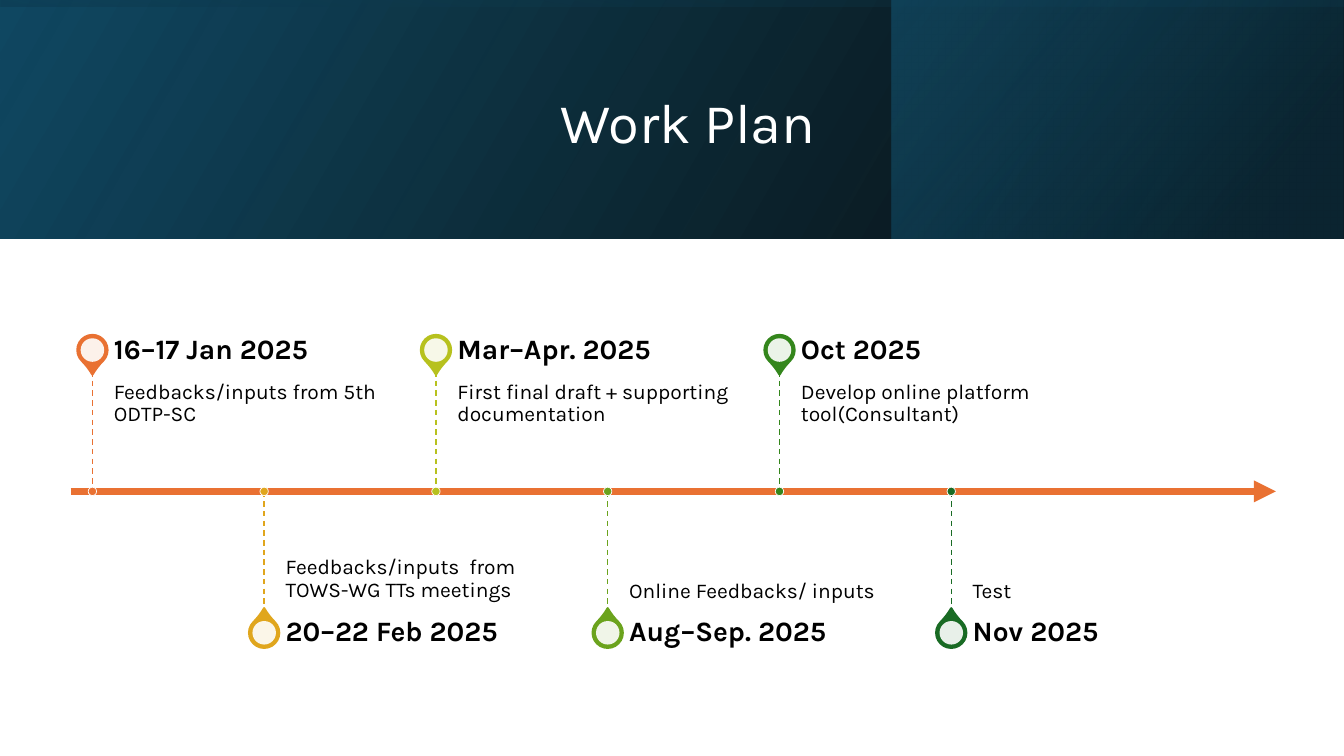
import pptx
import pptx.util
import pptx.dml.color
import pptx.enum.dml
import pptx.enum.shapes
import pptx.enum.text
import pptx.oxml
import pptx.oxml.ns
from dataclasses import dataclass

COLS, ROWS = 160, 90
UNIT = pptx.util.Inches(13.333333) / COLS
AXIS, FIRST, PITCH, STEM = 58.5, 11, 20.45, 14.33
BAND = 28.44
KIND = pptx.enum.shapes.MSO_SHAPE
ALIGN = pptx.enum.text.PP_ALIGN
ANCHOR = pptx.enum.text.MSO_ANCHOR


@dataclass(frozen=True)
class Theme:
    font: str = "Karla"
    white: str = "FFFFFF"
    black: str = "000000"
    axis: str = "E97132"
    deep: str = "104862"
    night: str = "0B3041"
    sea: str = "156082"
    title: int = 40
    date: int = 20
    note: int = 15


THEME = Theme()

STEPS = [
    ("16–17 Jan 2025", "Feedbacks/inputs from 5th ODTP-SC", "E97132"),
    ("20–22 Feb 2025", "Feedbacks/inputs  from TOWS-WG TTs meetings", "E0A61D"),
    ("Mar–Apr. 2025", "First final draft + supporting documentation", "B7C11E"),
    ("Aug–Sep. 2025", "Online Feedbacks/ inputs", "6BA31D"),
    ("Oct 2025", "Develop online platform tool(Consultant)", "34861C"),
    ("Nov 2025", "Test", "196B24"),
]


def span(*cells):
    return [round(cell * UNIT) for cell in cells]


def tint(code):
    return pptx.dml.color.RGBColor.from_string(code)


def put(item, values):
    for name, value in values.items():
        setattr(item, name, value)


def node(tag, **values):
    part = pptx.oxml.parse_xml(f"<a:{tag} {pptx.oxml.ns.nsdecls('a')}/>")
    for name, value in values.items():
        part.set(name, str(value))
    return part


def shape(shapes, kind, box, fill=None, edge=None, width=0, turn=0):
    item = shapes.add_shape(kind, *span(*box))
    put(item, {"rotation": turn})
    item.shadow.inherit = False
    if fill:
        item.fill.solid()
        item.fill.fore_color.rgb = tint(fill)
    if edge:
        item.line.color.rgb = tint(edge)
        item.line.width = pptx.util.Pt(width)
    else:
        item.line.fill.background()
    return item


def disc(shapes, x, y, size, **look):
    return shape(shapes, KIND.OVAL, (x - size / 2, y - size / 2, size, size), **look)


def panel(shapes, box, angle, stops, turn=0):
    item = shape(shapes, KIND.RECTANGLE, box, turn=turn)
    props = item._element.spPr
    props.xfrm.set("flipH", "1")
    grad = node("gradFill", rotWithShape=1)
    chain = node("gsLst")
    for place, code, alpha in stops:
        stop = node("gs", pos=place * 1000)
        color = node("srgbClr", val=code)
        color.append(node("alpha", val=alpha * 1000))
        stop.append(color)
        chain.append(stop)
    grad.append(chain)
    grad.append(node("lin", ang=angle * 60000, scaled=0))
    props.find(pptx.oxml.ns.qn("a:prstGeom")).addnext(grad)


def label(shapes, box, words, size, color=THEME.black, bold=False,
          pads=(0, 0, 0, 0), anchor=ANCHOR.MIDDLE, align=ALIGN.LEFT):
    frame = shapes.add_textbox(*span(*box)).text_frame
    left, top, right, bottom = span(*pads)
    put(frame, {"word_wrap": True, "vertical_anchor": anchor,
                "margin_left": left, "margin_top": top,
                "margin_right": right, "margin_bottom": bottom})
    para = frame.paragraphs[0]
    put(para, {"alignment": align, "line_spacing": 0.9})
    run = para.add_run()
    run.text = words
    put(run.font, {"name": THEME.font, "size": pptx.util.Pt(size), "bold": bold})
    run.font.color.rgb = tint(color)


def line(shapes, ends, color, width, dash=None, arrow=False):
    item = shapes.add_connector(pptx.enum.shapes.MSO_CONNECTOR.STRAIGHT, *span(*ends))
    item.line.color.rgb = tint(color)
    put(item.line, {"width": pptx.util.Pt(width), "dash_style": dash})
    if arrow:
        item.line._get_or_add_ln().append(node("tailEnd", type="triangle"))
    item._element.spPr.append(node("effectLst"))


def step(shapes, order, date, note, color):
    above = order % 2 == 0
    side = -1 if above else 1
    x = FIRST + order * PITCH
    tip = AXIS + side * STEM
    mid = tip + side * 2.5
    left, wide, drop = x + 2.55, 34, 3.6
    pin = shape(shapes, KIND.TEAR, (x - drop / 2, mid - drop / 2, drop, drop),
                fill=color, edge=color, width=1.5, turn=135 if above else 315)
    pin.adjustments[0] = 1.15
    hole = disc(shapes, x, mid, 2.8, fill=THEME.white)
    paint = hole._element.spPr.find(".//" + pptx.oxml.ns.qn("a:srgbClr"))
    paint.append(node("alpha", val=90000))
    label(shapes, (left, min(tip, AXIS), wide, STEM), note, THEME.note,
          pads=(0, 1.2, 1.2, 1.9) if above else (0, 1.9, 0, 1.2),
          anchor=ANCHOR.TOP if above else ANCHOR.BOTTOM)
    label(shapes, (left, mid - 2.5, wide, 5), date, THEME.date,
          bold=True, pads=(0, 0, 1.7, 0))
    line(shapes, (x, min(tip, AXIS), x, max(tip, AXIS)), color, 1,
         dash=pptx.enum.dml.MSO_LINE.DASH)
    disc(shapes, x, AXIS, 1, fill=color, edge=THEME.white, width=0.5)


def header(shapes):
    panel(shapes, (0, 0, COLS, BAND), 330,
          [(0, THEME.black, 96), (100, THEME.deep, 100)])
    panel(shapes, (106.1, 0, 53.8, BAND), 320,
          [(19, THEME.night, 68), (100, THEME.sea, 48)])
    panel(shapes, ((COLS - BAND) / 2, (BAND - COLS) / 2, BAND, COLS), 350,
          [(23, THEME.deep, 16), (99, THEME.black, 45)], turn=270)
    label(shapes, (18.1, 4.55, 127.6, 20.65), "Work Plan", THEME.title,
          color=THEME.white, pads=(1.2, 0.6, 1.2, 0.6), align=ALIGN.CENTER)


def main():
    deck = pptx.Presentation()
    wide, high = span(COLS, ROWS)
    put(deck, {"slide_width": wide, "slide_height": high})
    slide = deck.slides.add_slide(deck.slide_layouts[6])
    header(slide.shapes)
    shapes = slide.shapes.add_group_shape().shapes
    line(shapes, (8.4, AXIS, 151.9, AXIS), THEME.axis, 5.25, arrow=True)
    for order, entry in enumerate(STEPS):
        step(shapes, order, *entry)
    deck.save("out.pptx")


if __name__ == "__main__":
    main()
